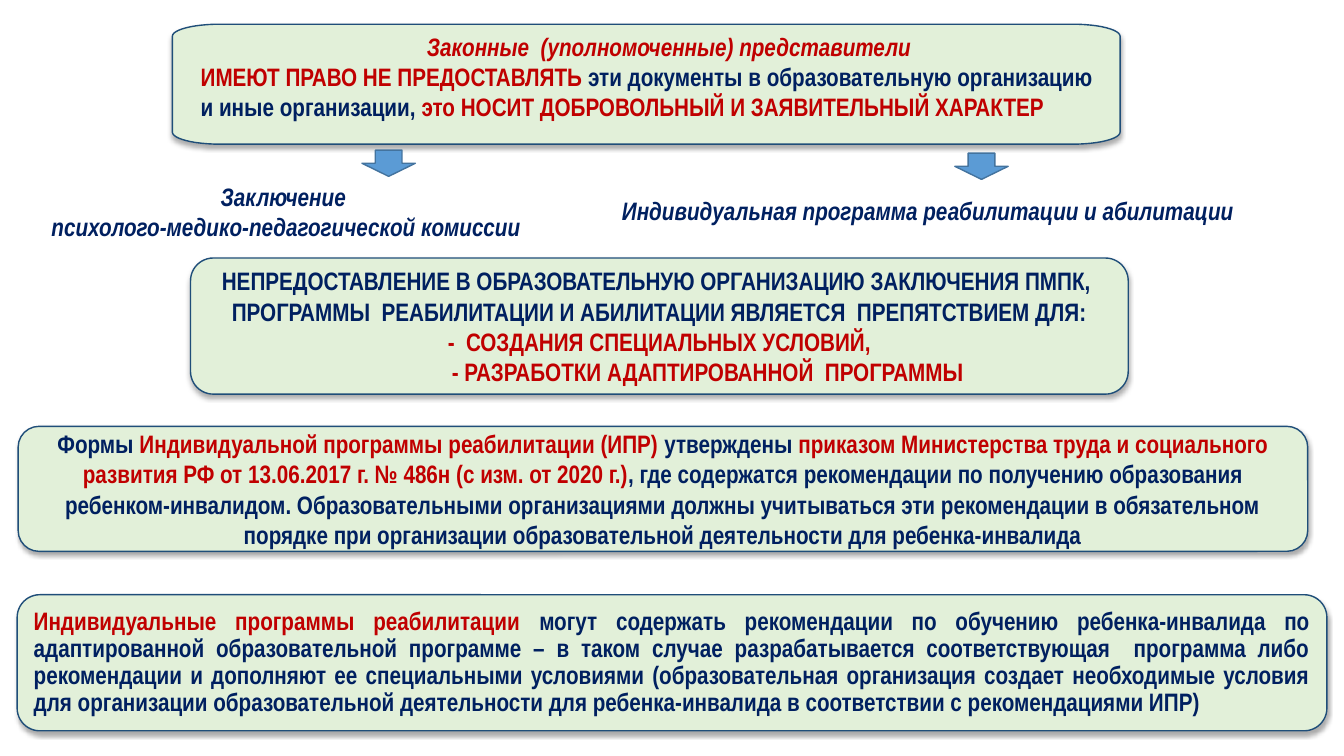
from math import cos, pi, sin

from lxml.etree import SubElement
from pptx import Presentation
from pptx.dml.color import RGBColor
from pptx.enum.shapes import MSO_SHAPE as Kind
from pptx.enum.text import MSO_ANCHOR as Anchor, MSO_AUTO_SIZE as Auto, PP_ALIGN as Align
from pptx.oxml.ns import qn
from pptx.util import Inches, Pt

NAVY, RED = "002060", "C00000"


def paint(target, code):
    """Give a fill or a line fill one solid colour."""
    target.solid()
    target.fore_color.rgb = RGBColor.from_string(code)


class Board:
    """Style and current slide."""
    font, size = "Arial Narrow", Pt(18)
    panel, edge = "E2F0D9", "1F4E79"
    arrow, rim = "5B9BD5", "43739E"

    def __init__(self, deck):
        self.slide = deck.slides.add_slide(deck.slide_layouts[5])
        self.shapes = self.slide.shapes

    def style(self, shape, fill, line):
        shape.shadow.inherit = False
        paint(shape.fill, fill)
        paint(shape.line.fill, line)
        shape.line.width = Pt(1)

    def shade(self, shape):
        effects = shape.element.spPr.find(qn("a:effectLst"))
        outer = SubElement(effects, qn("a:outerShdw"), blurRad=str(Pt(3.5)),
                           dist=str(Pt(2.2)), dir="5400000", algn="t", rotWithShape="0")
        color = SubElement(outer, qn("a:srgbClr"), val="000000")
        SubElement(color, qn("a:alpha"), val="32000")

    def fill_text(self, frame, lines, align=Align.CENTER, italic=False, anchor=Anchor.MIDDLE):
        """Each line is a list of (text, colour) parts."""
        frame.word_wrap = True
        frame.vertical_anchor = anchor
        frame.margin_left = frame.margin_right = Inches(0.1)
        frame.margin_top = frame.margin_bottom = Inches(0.05)
        for num, parts in enumerate(lines):
            para = frame.add_paragraph() if num else frame.paragraphs[0]
            para.alignment = align
            for text, color in parts:
                run = para.add_run()
                run.text = text
                font = run.font
                font.name, font.size = self.font, self.size
                font.bold, font.italic = True, italic
                paint(font.fill, color)
        return frame.paragraphs

    def box(self, left, top, width, height, lines, align=Align.CENTER):
        shape = self.shapes.add_shape(Kind.ROUNDED_RECTANGLE, Inches(left), Inches(top),
                                      Inches(width), Inches(height))
        self.style(shape, self.panel, self.edge)
        self.shade(shape)
        return self.fill_text(shape.text_frame, lines, align)

    def plate(self, left, top, width, height, rx, ry, steps=12):
        """Panel whose corners are quarter ellipses."""
        corners = [(left + width - rx, top + ry, -pi / 2), (left + width - rx, top + height - ry, 0),
                   (left + rx, top + height - ry, pi / 2), (left + rx, top + ry, pi)]
        turns = [pi / 2 * step / steps for step in range(steps + 1)]
        points = [(Inches(x + rx * cos(start + turn)), Inches(y + ry * sin(start + turn)))
                  for x, y, start in corners for turn in turns]
        outline = self.shapes.build_freeform(*points[0])
        outline.add_line_segments(points[1:], close=True)
        shape = outline.convert_to_shape()
        self.style(shape, self.panel, self.edge)
        self.shade(shape)

    def title(self, left, top, width, height, lines):
        shape = self.shapes.title
        shape.element.getparent().append(shape.element)  # bring in front of the plate
        shape.left, shape.top = Inches(left), Inches(top)
        shape.width, shape.height = Inches(width), Inches(height)
        shape.text_frame.auto_size = Auto.SHAPE_TO_FIT_TEXT
        paras = self.fill_text(shape.text_frame, lines, Align.LEFT, anchor=Anchor.TOP)
        paras[0].alignment = Align.CENTER
        paras[0].runs[0].font.italic = True

    def label(self, left, top, width, height, lines, align):
        shape = self.shapes.add_textbox(Inches(left), Inches(top), Inches(width), Inches(height))
        shape.text_frame.auto_size = Auto.SHAPE_TO_FIT_TEXT
        self.fill_text(shape.text_frame, [[(line, NAVY)] for line in lines], align, True, Anchor.TOP)

    def down(self, left, top):
        shape = self.shapes.add_shape(Kind.DOWN_ARROW, Inches(left), Inches(top),
                                      Inches(0.53), Inches(0.26))
        self.style(shape, self.arrow, self.rim)


def main():
    deck = Presentation()
    deck.slide_width, deck.slide_height = Inches(13.33), Inches(7.5)
    board = Board(deck)

    # Heading
    board.plate(1.71, 0.24, 9.4, 1.19, 0.47, 0.12)
    board.title(1.89, 0.26, 9.55, 1.01, [
        [("Законные  (уполномоченные) представители ", RED)],
        [("ИМЕЮТ ПРАВО НЕ ПРЕДОСТАВЛЯТЬ ", RED),
         ("эти документы в образовательную организацию", NAVY)],
        [("и иные организации, ", NAVY),
         ("это НОСИТ ДОБРОВОЛЬНЫЙ И ЗАЯВИТЕЛЬНЫЙ ХАРАКТЕР", RED)]])

    # Two documents
    board.down(3.59, 1.49)
    board.down(9.47, 1.52)
    board.label(0.18, 1.75, 5.26, 0.71,
                ["Заключение", " психолого-медико-педагогической комиссии"], Align.CENTER)
    board.label(6.07, 1.89, 6.79, 0.4,
                ["Индивидуальная программа реабилитации и абилитации"], Align.LEFT)

    # Consequences
    paras = board.box(1.89, 2.56, 9.3, 1.35, [
        [("НЕПРЕДОСТАВЛЕНИЕ В ОБРАЗОВАТЕЛЬНУЮ ОРГАНИЗАЦИЮ ЗАКЛЮЧЕНИЯ ПМПК, ", NAVY)],
        [("ПРОГРАММЫ  РЕАБИЛИТАЦИИ И АБИЛИТАЦИИ ЯВЛЯЕТСЯ  ПРЕПЯТСТВИЕМ ДЛЯ:", NAVY)],
        [("-  СОЗДАНИЯ СПЕЦИАЛЬНЫХ УСЛОВИЙ,", RED)],
        [("- РАЗРАБОТКИ АДАПТИРОВАННОЙ  ПРОГРАММЫ", RED)]])
    paras[-1]._p.get_or_add_pPr().set("marL", str(Inches(0.96)))

    # Programme forms
    board.box(0.18, 4.23, 12.79, 1.24, [[
        ("Формы ", NAVY),
        ("Индивидуальной программы реабилитации (ИПР) ", RED),
        ("утверждены ", NAVY),
        ("приказом Министерства труда и социального развития РФ "
         "от 13.06.2017 г. № 486н (с изм. от 2020 г.)", RED),
        (", где содержатся рекомендации по получению образования ребенком-инвалидом. "
         "Образовательными организациями должны учитываться эти рекомендации в обязательном "
         "порядке при организации образовательной деятельности для ребенка-инвалида", NAVY)]])

    # Programme content
    paras = board.box(0.17, 5.9, 12.99, 1.35, [[
        ("Индивидуальные программы реабилитации ", RED),
        ("могут содержать рекомендации по обучению ребенка-инвалида по адаптированной "
         "образовательной программе – в таком случае разрабатывается соответствующая  программа "
         "либо рекомендации и дополняют ее специальными условиями (образовательная организация "
         "создает необходимые условия для организации образовательной деятельности для "
         "ребенка-инвалида в соответствии с рекомендациями ИПР)", NAVY)]], Align.JUSTIFY)
    paras[0].line_spacing, paras[0].space_before = 0.9, Pt(10)

    deck.save("out.pptx")


if __name__ == "__main__":
    main()
